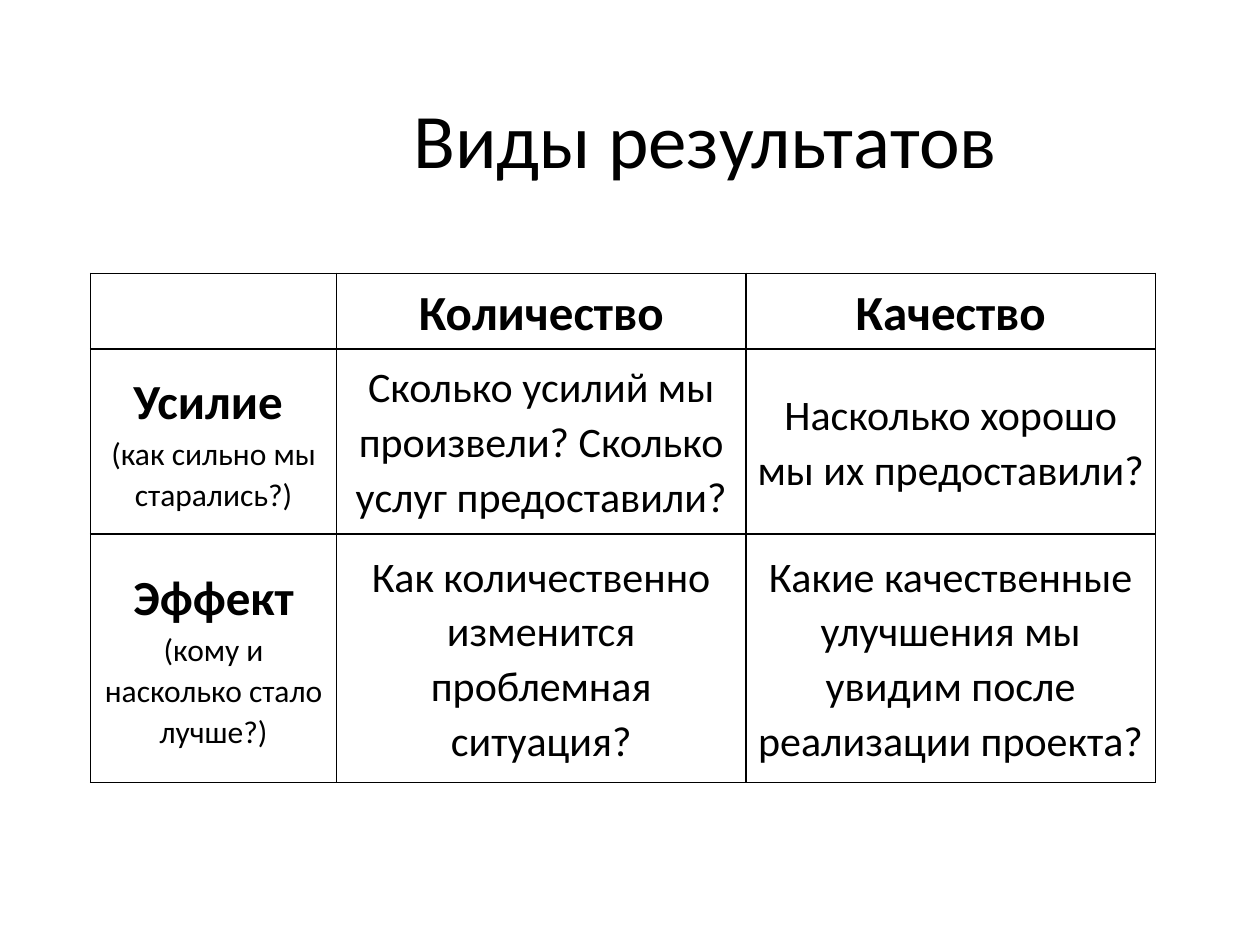
"""Build a slide with a table of result kinds."""
from dataclasses import dataclass
from lxml import etree
from pptx import Presentation
from pptx import util as u
from pptx.dml.color import RGBColor
from pptx.enum import text as t
from pptx.oxml import ns

HUES = {"ink": "000000"}
FONT = "Calibri"
COLS = (1.95, 3.25, 3.25)
ROWS = (0.6, 1.47, 1.97)


@dataclass
class Line:
    words: str
    size: int = 24
    bold: bool = False


def head(words: str) -> Line:
    return Line(words, 28, True)


def note(words: str) -> Line:
    return Line(words, 18)


GRID = (
    ((), (head("Количество"),), (head("Качество"),)),
    (
        (head("Усилие "), note("(как сильно мы старались?)")),
        (Line("Сколько усилий мы произвели? Сколько услуг предоставили?"),),
        (Line("Насколько хорошо мы их предоставили?"),),
    ),
    (
        (head("Эффект"), note("(кому и насколько стало лучше?)")),
        (Line("Как количественно изменится проблемная ситуация?"),),
        (Line("Какие качественные улучшения мы увидим после реализации проекта?"),),
    ),
)


def add_run(para, line: Line) -> None:
    run = para.add_run()
    run.text = line.words
    font = run.font
    font.name, font.size, font.bold = FONT, u.Pt(line.size), line.bold
    font.color.rgb = RGBColor.from_string(HUES["ink"])


def add_edges(cell) -> None:
    props = cell._tc.get_or_add_tcPr()
    for spot, side in enumerate(("lnL", "lnR", "lnT", "lnB")):
        edge = etree.Element(ns.qn(f"a:{side}"), w=str(u.Pt(1)))
        fill = etree.SubElement(edge, ns.qn("a:solidFill"))
        etree.SubElement(fill, ns.qn("a:srgbClr"), val=HUES["ink"])
        props.insert(spot, edge)


def fill_cell(cell, lines: tuple[Line, ...]) -> None:
    cell.fill.background()
    add_edges(cell)
    cell.vertical_anchor = t.MSO_ANCHOR.MIDDLE
    cell.margin_left = cell.margin_right = u.Inches(0.06)
    cell.margin_top = cell.margin_bottom = 0
    frame = cell.text_frame
    for spot, line in enumerate(lines):
        para = frame.add_paragraph() if spot else frame.paragraphs[0]
        para.alignment = t.PP_ALIGN.CENTER
        para.line_spacing = 1.07
        add_run(para, line)


def add_grid(slide) -> None:
    table = slide.shapes.add_table(
        len(ROWS), len(COLS), u.Inches(0.72), u.Inches(2.17),
        u.Inches(sum(COLS)), u.Inches(sum(ROWS))).table
    table.first_row = table.horz_banding = False
    for col, width in zip(table.columns, COLS):
        col.width = u.Inches(width)
    for row, height, items in zip(table.rows, ROWS, GRID):
        row.height = u.Inches(height)
        for cell, lines in zip(row.cells, items):
            fill_cell(cell, lines)


def add_title(slide) -> None:
    title = slide.shapes.title
    title.left, title.top = u.Inches(3.18), u.Inches(0.68)
    title.width, title.height = u.Inches(4.88), u.Inches(0.84)
    frame = title.text_frame
    frame.word_wrap = False
    frame.auto_size = t.MSO_AUTO_SIZE.SHAPE_TO_FIT_TEXT
    frame.vertical_anchor = t.MSO_ANCHOR.TOP
    para = frame.paragraphs[0]
    para.alignment = t.PP_ALIGN.LEFT
    add_run(para, Line("Виды результатов", 44))


def main() -> None:
    deck = Presentation()
    deck.slide_width, deck.slide_height = u.Inches(10), u.Inches(7.5)
    slide = deck.slides.add_slide(deck.slide_layouts[5])
    add_grid(slide)
    add_title(slide)
    deck.save("out.pptx")


if __name__ == "__main__":
    main()
